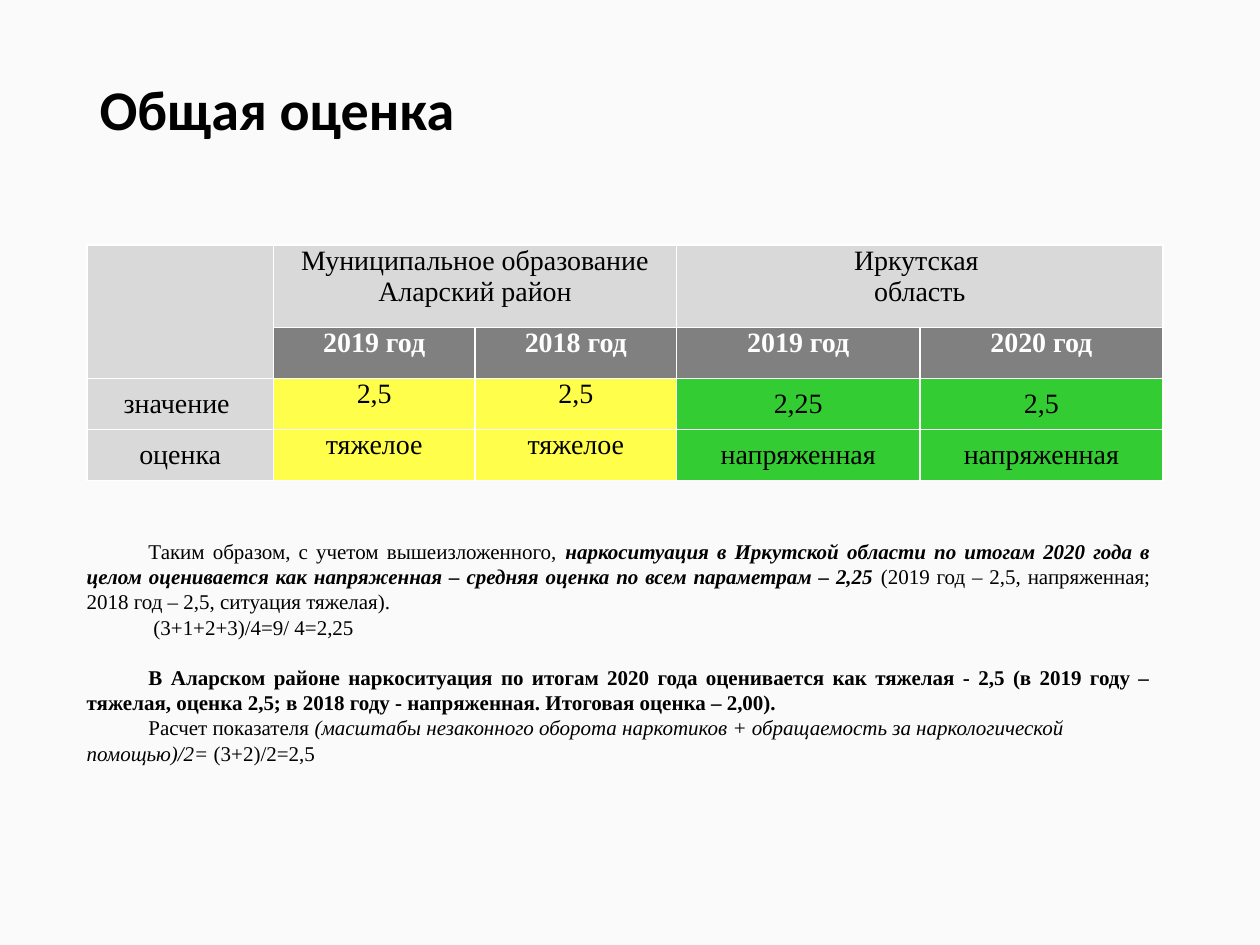
from lxml import etree
from pptx import Presentation
from pptx import util as u
from pptx.dml.color import RGBColor
from pptx.enum import text
from pptx.oxml.ns import qn

COLORS = {
    "back": "FAFAFA", "ink": "000000", "white": "FFFFFF", "head": "D9D9D9",
    "year": "808080", "hard": "FFFF4B", "tense": "33CC33",
}
SERIF = "Times New Roman"
MID = text.MSO_ANCHOR.MIDDLE
TOP = text.MSO_ANCHOR.TOP
LEFT, MIDDLE, JUSTIFY = (text.PP_ALIGN.LEFT, text.PP_ALIGN.CENTER,
                         text.PP_ALIGN.JUSTIFY)

WIDTHS = [14.8, 16, 16, 19.3, 19.3]
HEIGHTS = [6.55, 4.05, 4.05, 4.05]
MERGES = [(0, 0, 1, 0), (0, 1, 0, 2), (0, 3, 0, 4)]
ROWS = [
    ["", "Муниципальное образование Аларский район", "",
     "Иркутская \nобласть", ""],
    ["", "2019 год", "2018 год", "2019 год", "2020 год"],
    ["значение ", "2,5", "2,5", "2,25", "2,5"],
    ["оценка", "тяжелое", "тяжелое", "напряженная", "напряженная"],
]

# Each paragraph: format values, then runs of (text, font values)
NOTES = [
    ({}, [
        ("Таким образом, с учетом вышеизложенного, ", {}),
        ("наркоситуация в Иркутской области по итогам 2020 года в целом "
         "оценивается как напряженная – средняя оценка по всем параметрам "
         "– 2,25 ", {"bold": True, "italic": True}),
        ("(2019 год – 2,5, напряженная; 2018 год – 2,5, ситуация тяжелая).",
         {}),
    ]),
    ({"indent": 5.3}, [("(3+1+2+3)/4=9/ 4=2,25", {})]),
    ({"before": 14.4}, [
        ("В Аларском районе наркоситуация по итогам 2020 года оценивается "
         "как тяжелая - 2,5 (в 2019 году – тяжелая, оценка 2,5; в 2018 году "
         "- напряженная. Итоговая оценка – 2,00).", {"bold": True}),
    ]),
    ({"align": LEFT}, [
        ("Расчет показателя ", {}),
        ("(масштабы незаконного оборота наркотиков + обращаемость за "
         "наркологической помощью)/2=", {"italic": True}),
        (" (3+2)/2=2,5", {}),
    ]),
]


def assign(obj, **values):
    for name, value in values.items():
        setattr(obj, name, value)


def rgb(name):
    return RGBColor.from_string(COLORS[name])


def grid(cells):
    """Length of a number of cells on a 100 by 75 grid."""
    return u.Inches(cells / 10)


class Deck:
    def __init__(self):
        self.prs = Presentation()
        assign(self.prs, slide_width=grid(100), slide_height=grid(75))
        self.slide = self.prs.slides.add_slide(self.prs.slide_layouts[5])
        fill = self.slide.background.fill
        fill.solid()
        fill.fore_color.rgb = rgb("back")

    def font(self, item, color="ink", **values):
        assign(item.font, **{"name": SERIF, "bold": False,
                             "italic": False, **values})
        item.font.color.rgb = rgb(color)

    def title(self, words, box):
        shape = self.slide.shapes.title
        assign(shape, **dict(zip(("left", "top", "width", "height"),
                                 map(grid, box))))
        frame = shape.text_frame
        frame.text = words
        assign(frame, vertical_anchor=MID, word_wrap=True,
               auto_size=text.MSO_AUTO_SIZE.NONE, margin_bottom=grid(5.2))
        par = frame.paragraphs[0]
        assign(par, alignment=LEFT, line_spacing=0.9)
        self.font(par.runs[0], name="Calibri", size=u.Pt(32), bold=True)

    def edge(self, cell):
        """White hairlines on all four sides."""
        props = cell._tc.get_or_add_tcPr()
        for spot, side in enumerate(("lnL", "lnR", "lnT", "lnB")):
            line = etree.Element(qn(f"a:{side}"), w=str(u.Pt(1)))
            fill = etree.SubElement(line, qn("a:solidFill"))
            etree.SubElement(fill, qn("a:srgbClr"), val=COLORS["white"])
            props.insert(spot, line)

    def cell(self, cell, words, fill, color="ink", bold=False, anchor=TOP):
        cell.text = words
        assign(cell, margin_left=grid(0.4), margin_right=grid(0.4),
               margin_top=0, margin_bottom=0, vertical_anchor=anchor)
        cell.fill.solid()
        cell.fill.fore_color.rgb = rgb(fill)
        for par in cell.text_frame.paragraphs:
            par.alignment = MIDDLE
            self.font(par, color, size=u.Pt(16), bold=bold)
        self.edge(cell)

    def table(self, left, top):
        shape = self.slide.shapes.add_table(
            len(ROWS), len(WIDTHS), grid(left), grid(top),
            grid(sum(WIDTHS)), grid(sum(HEIGHTS)))
        table = shape.table
        assign(table, first_row=False, horz_banding=False)
        for col, width in zip(table.columns, WIDTHS):
            col.width = grid(width)
        for row, height in zip(table.rows, HEIGHTS):
            row.height = grid(height)
        for r, row in enumerate(ROWS):
            for c, words in enumerate(row):
                if r == 0 or c == 0:
                    look = {"fill": "head", "anchor": MID if r > 1 else TOP}
                elif r == 1:
                    look = {"fill": "year", "color": "white", "bold": True}
                elif c < 3:
                    look = {"fill": "hard"}
                else:
                    look = {"fill": "tense", "anchor": MID}
                self.cell(table.cell(r, c), words, **look)
        for r, c, end, last in MERGES:
            table.cell(r, c).merge(table.cell(end, last))

    def notes(self, box):
        frame = self.slide.shapes.add_textbox(*map(grid, box)).text_frame
        frame.word_wrap = True
        for n, (form, runs) in enumerate(NOTES):
            par = frame.add_paragraph() if n else frame.paragraphs[0]
            par.alignment = form.get("align", JUSTIFY)
            if "before" in form:
                par.space_before = u.Pt(form["before"])
            props = par._p.get_or_add_pPr()
            props.set("marL", "0")
            props.set("indent", str(grid(form.get("indent", 4.9))))
            for words, look in runs:
                run = par.add_run()
                run.text = words
                self.font(run, size=u.Pt(12), **look)


def main():
    deck = Deck()
    deck.title("Общая оценка", (6.9, 4, 86.2, 14.5))
    deck.table(6.9, 19.45)
    deck.notes((5.9, 42.25, 86.4, 19.2))
    deck.prs.save("out.pptx")


if __name__ == "__main__":
    main()
